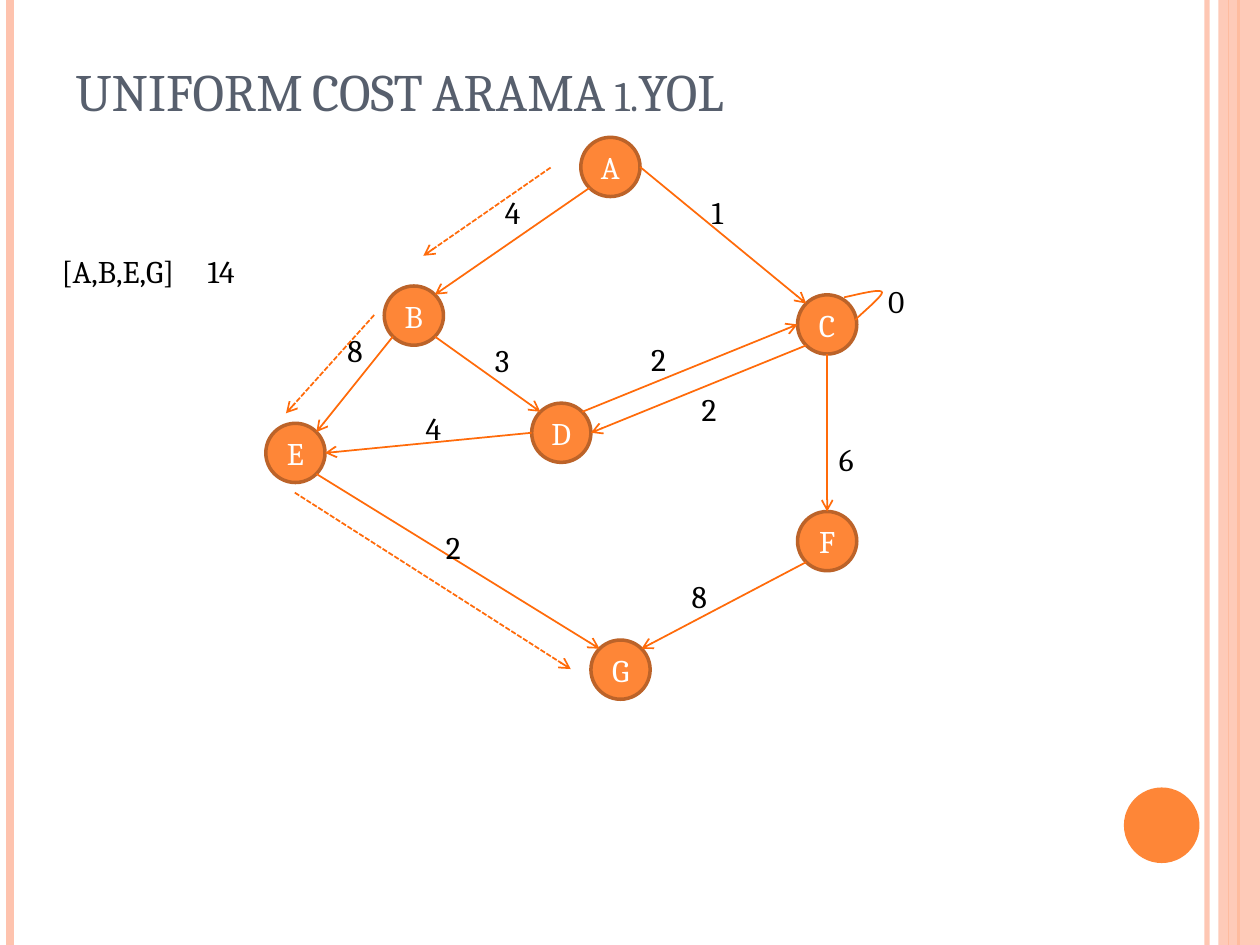
from lxml import etree
from pptx import Presentation
from pptx.dml.color import RGBColor
from pptx.enum.dml import MSO_LINE
from pptx.enum.shapes import MSO_CONNECTOR, MSO_SHAPE
from pptx.enum.text import MSO_ANCHOR, PP_ALIGN
from pptx.oxml.ns import qn
from pptx.util import Inches, Pt

STRAIGHT = MSO_CONNECTOR.STRAIGHT
OVAL, RECT = MSO_SHAPE.OVAL, MSO_SHAPE.RECTANGLE
CENTER, LEFT = PP_ALIGN.CENTER, PP_ALIGN.LEFT
MIDDLE, BOTTOM = MSO_ANCHOR.MIDDLE, MSO_ANCHOR.BOTTOM
DASH = MSO_LINE.SQUARE_DOT

ORANGE = RGBColor(0xFE, 0x86, 0x37)
RIM = RGBColor(0xBC, 0x63, 0x29)
EDGE = RGBColor(0xFF, 0x6B, 0x0A)
PEACH = RGBColor(0xFE, 0xC3, 0xAE)
SLATE = RGBColor(0x57, 0x5F, 0x6D)
BLACK = RGBColor(0, 0, 0)
WHITE = RGBColor(0xFF, 0xFF, 0xFF)
FONT = "Cambria"
WIDTH, HEIGHT = 10, 7.5

TITLE = "UNIFORM COST ARAMA 1.YOL"
PATH, PATH_COST = "[A,B,E,G]", "14"

NODE = 0.47
NODES = {  # left, top
    "A": (4.61, 1.09), "B": (3.05, 2.27), "C": (6.33, 2.34), "D": (4.22, 3.2),
    "E": (2.11, 3.36), "G": (4.69, 5.08), "F": (6.33, 4.06),
}
DIAG = 0.3536  # half of the cosine of 45 degrees
SITES = {  # offset from the node's centre, in diameters
    "n": (0, -0.5), "s": (0, 0.5), "w": (-0.5, 0), "e": (0.5, 0),
    "nw": (-DIAG, -DIAG), "ne": (DIAG, -DIAG),
    "sw": (-DIAG, DIAG), "se": (DIAG, DIAG),
}
EDGES = [  # from node, site, to node, site, cost, left and top of its label
    ("A", "sw", "B", "ne", "4", 3.91, 1.48),
    ("B", "sw", "E", "ne", "8", 2.66, 2.58),
    ("B", "se", "D", "nw", "3", 3.83, 2.66),
    ("E", "se", "G", "nw", "2", 3.44, 4.14),
    ("A", "e", "C", "nw", "1", 5.55, 1.48),
    ("C", "s", "F", "n", "6", 6.56, 3.44),
    ("F", "sw", "G", "ne", "8", 5.39, 4.53),
    ("D", "w", "E", "e", "4", 3.28, 3.2),
    ("D", "ne", "C", "w", "2", 5.07, 2.65),
    ("C", "sw", "D", "e", "2", 5.47, 3.05),
]
LOOP_CURVES = [  # cubic curves of C's edge to itself
    [(6.7, 2.36), (6.84, 2.33), (6.99, 2.29), (7, 2.32)],
    [(7, 2.32), (7.01, 2.35), (6.81, 2.51), (6.79, 2.54)],
]
LOOP_LABEL = ("0", 6.95, 2.19)
ROUTE = [
    ((4.37, 1.33), (3.36, 2.03)),
    ((2.97, 2.5), (2.27, 3.28)),
    ((2.34, 3.91), (4.53, 5.31)),
]
RULES = [  # x, colour, width in points, opacity in percent
    (9.58, PEACH, 3, 93), (0.08, PEACH, 4.5, 100),
    (9.83, ORANGE, 1.5, 100), (9.75, ORANGE, 0.75, 100),
]


def set_opacity(props, percent):
    color = next(props.iter(qn("a:srgbClr")))
    etree.SubElement(color, qn("a:alpha"), val=str(percent * 1000))


def add_line(start, end, color, width, arrow=False, dash=None):
    s = shapes.add_connector(STRAIGHT, *map(Inches, start + end))
    s.line.color.rgb, s.line.width = color, Pt(width)
    if dash:
        s.line.dash_style = dash
    if arrow:
        etree.SubElement(s.line._get_or_add_ln(), qn("a:tailEnd"), type="arrow")
    etree.SubElement(s._element.spPr, qn("a:effectLst"))
    return s


def add_filled(kind, box, fill, rim=None):
    s = shapes.add_shape(kind, *map(Inches, box))
    s.shadow.inherit = False
    s.fill.solid()
    s.fill.fore_color.rgb = fill
    if rim:
        s.line.color.rgb, s.line.width = rim, Pt(2)
    else:
        s.line.fill.background()
    return s


def write(p, text, color, size=18, align=LEFT):
    p.alignment = align
    r = p.add_run()
    r.text = text
    r.font.name, r.font.size, r.font.color.rgb = FONT, Pt(size), color
    return r


def add_label(text, left, top, width=0.34):
    tf = shapes.add_textbox(*map(Inches, (left, top, width, 0.4))).text_frame
    tf.word_wrap = False
    write(tf.paragraphs[0], text, BLACK)
    return tf


def site_point(node, site):
    return tuple(corner + NODE * (0.5 + shift)
                 for corner, shift in zip(NODES[node], SITES[site]))


def curve_points(curve, steps=16):
    """Points along a cubic Bezier curve, start included."""
    for i in range(steps + 1):
        t = i / steps
        weights = ((1 - t) ** 3, 3 * t * (1 - t) ** 2, 3 * t * t * (1 - t), t ** 3)
        yield tuple(Inches(sum(w * c for w, c in zip(weights, axis)))
                    for axis in zip(*curve))


prs = Presentation()
prs.slide_width, prs.slide_height = Inches(WIDTH), Inches(HEIGHT)
slide = prs.slides.add_slide(prs.slide_layouts[5])
shapes = slide.shapes

# Side decoration
for x, color, width, opacity in RULES:
    rule = add_line((x, 0), (x, HEIGHT), color, width)
    if opacity < 100:
        set_opacity(rule._element.spPr, opacity)
band = add_filled(RECT, (9.67, 0, 0.33, HEIGHT), PEACH)
set_opacity(band._element.spPr, 87)
add_filled(OVAL, (8.92, 6.25, 0.6, 0.6), ORANGE)

# Title
title = shapes.title
title.left, title.top, title.width, title.height = map(Inches, (0.5, 0.3, 8.09, 0.72))
title.text_frame.vertical_anchor = BOTTOM
r = write(title.text_frame.paragraphs[0], TITLE, SLATE, 30)
r.font._element.set("cap", "small")

# Graph
for name, corner in NODES.items():
    s = add_filled(OVAL, corner + (NODE, NODE), ORANGE, RIM)
    tf = s.text_frame
    tf.vertical_anchor, tf.word_wrap = MIDDLE, False
    write(tf.paragraphs[0], name, WHITE, align=CENTER)

for tail, tail_site, head, head_site, cost, left, top in EDGES:
    add_line(site_point(tail, tail_site), site_point(head, head_site), EDGE, 1, arrow=True)
    add_label(cost, left, top)

points = [pt for curve in LOOP_CURVES for pt in curve_points(curve)]
builder = shapes.build_freeform(*points[0])
builder.add_line_segments(points[1:], close=False)
loop = builder.convert_to_shape()
loop.shadow.inherit = False
loop.fill.background()
loop.line.color.rgb, loop.line.width = EDGE, Pt(1)
add_label(*LOOP_LABEL)

# Chosen route and its cost
for start, end in ROUTE:
    add_line(start, end, EDGE, 1, arrow=True, dash=DASH)
tf = add_label(PATH + "\t" + PATH_COST, 0.39, 1.95, 1.88)
tf.word_wrap = True
tabs = etree.SubElement(tf.paragraphs[0]._p.get_or_add_pPr(), qn("a:tabLst"))
etree.SubElement(tabs, qn("a:tab"), pos=str(Inches(1.16)), algn="l")

prs.save("out.pptx")
